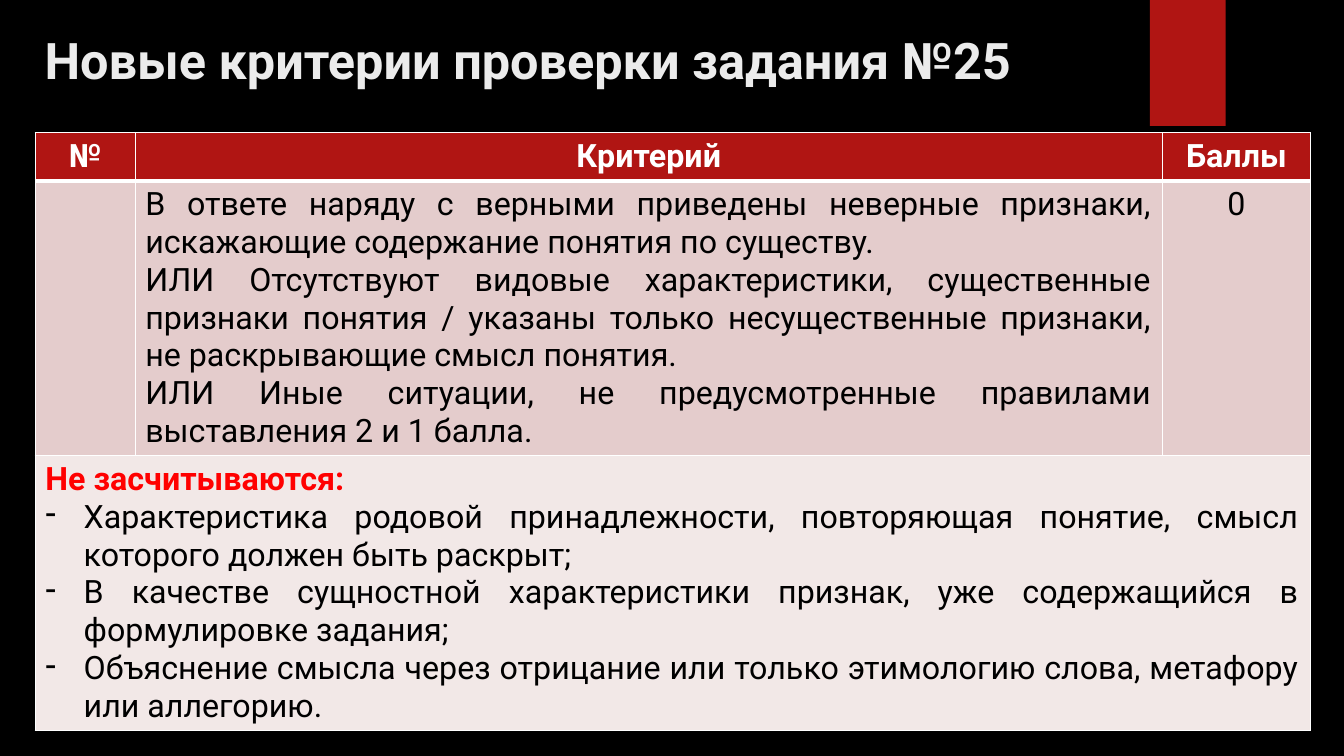
import lxml.etree
import pptx
import pptx.dml.color
import pptx.enum.shapes
import pptx.enum.text
import pptx.oxml.ns
import pptx.util

RGBColor = pptx.dml.color.RGBColor
Align = pptx.enum.text.PP_ALIGN
BLACK = RGBColor(0x00, 0x00, 0x00)
WHITE = RGBColor(0xFF, 0xFF, 0xFF)
PALE_WHITE = RGBColor(0xEB, 0xEB, 0xEB)
CRIMSON = RGBColor(0xB0, 0x15, 0x13)
RED = RGBColor(0xFF, 0x00, 0x00)
ROSE = RGBColor(0xE4, 0xCC, 0xCC)
LIGHT_ROSE = RGBColor(0xF2, 0xE8, 0xE7)

TITLE = "Новые критерии проверки задания №25"
HEADINGS = ["№", "Критерий", "Баллы"]
CRITERIA = [
    "В ответе наряду с верными приведены неверные признаки, искажающие содержание понятия по существу.",
    "ИЛИ Отсутствуют видовые характеристики, существенные признаки понятия / указаны только "
    "несущественные признаки, не раскрывающие смысл понятия.",
    "ИЛИ Иные ситуации, не предусмотренные правилами выставления 2 и 1 балла.",
]
REJECTED_HEADING = "Не засчитываются:"
REJECTED = [
    "Характеристика родовой принадлежности, повторяющая понятие, смысл которого должен быть раскрыт;",
    "В качестве сущностной характеристики признак, уже содержащийся в формулировке задания;",
    "Объяснение смысла через отрицание или только этимологию слова, метафору или аллегорию.",
]


def add_element(parent, tag, **attributes):
    """Append a drawing element with the given attributes."""
    element = lxml.etree.SubElement(parent, pptx.oxml.ns.qn(tag))
    for name, value in attributes.items():
        element.set(name, str(value))
    return element


def write(frame, text, size=23, color=BLACK, bold=False, align=Align.JUSTIFY, bullet=None):
    """Write one paragraph, reusing the first one while it is empty."""
    para = frame.paragraphs[0] if not frame.text else frame.add_paragraph()
    para.alignment = align
    if bullet:
        indent = pptx.util.Inches(0.38)
        properties = para._p.get_or_add_pPr()
        properties.set("marL", str(indent))
        properties.set("indent", str(-indent))
        add_element(properties, "a:buChar", char=bullet)
    span = para.add_run()
    span.text = text
    span.font.name = "Roboto"
    span.font.size = pptx.util.Pt(size)
    span.font.bold = bold
    span.font.color.rgb = color


class Page:
    """A slide on a grid of 160 columns by 90 rows."""

    def __init__(self, deck):
        """Add a title-only slide with a black background."""
        self.column = deck.slide_width / 160
        self.row = deck.slide_height / 90
        self.slide = deck.slides.add_slide(deck.slide_layouts[5])
        self.slide.background.fill.solid()
        self.slide.background.fill.fore_color.rgb = BLACK

    def place(self, left, top, width, height):
        """Turn grid units into slide lengths."""
        return (int(left * self.column), int(top * self.row),
                int(width * self.column), int(height * self.row))

    def title(self, text, *area):
        """Move and fill the title placeholder."""
        box = self.slide.shapes.title
        box.left, box.top, box.width, box.height = self.place(*area)
        box.text_frame.vertical_anchor = pptx.enum.text.MSO_ANCHOR.MIDDLE
        write(box.text_frame, text, size=36, color=PALE_WHITE, bold=True, align=Align.LEFT)

    def block(self, color, *area):
        """Draw a plain filled rectangle."""
        box = self.slide.shapes.add_shape(
            pptx.enum.shapes.MSO_SHAPE.RECTANGLE, *self.place(*area))
        box.shadow.inherit = False
        box.fill.solid()
        box.fill.fore_color.rgb = color
        box.line.fill.background()

    def table(self, left, top, widths, heights, fills):
        """Add a table with white borders and one fill per row."""
        area = self.place(left, top, sum(widths), sum(heights))
        table = self.slide.shapes.add_table(len(heights), len(widths), *area).table
        for column, width in zip(table.columns, widths):
            column.width = int(width * self.column)
        for index, (row, height, fill) in enumerate(zip(table.rows, heights, fills)):
            row.height = int(height * self.row)
            for cell in row.cells:
                self.border(cell, top=3 if index == 1 else 1, bottom=3 if index == 0 else 1)
                cell.fill.solid()
                cell.fill.fore_color.rgb = fill
        return table

    def border(self, cell, top, bottom):
        """Give a cell white borders of the given widths in points."""
        properties = cell._tc.get_or_add_tcPr()
        for side, width in (("L", 1), ("R", 1), ("T", top), ("B", bottom)):
            line = add_element(properties, f"a:ln{side}", w=pptx.util.Pt(width))
            add_element(add_element(line, "a:solidFill"), "a:srgbClr", val=WHITE)


def main():
    """Build and save the slide."""
    deck = pptx.Presentation()
    deck.slide_width = pptx.util.Inches(13.33)
    deck.slide_height = pptx.util.Inches(7.5)
    page = Page(deck)
    page.block(CRIMSON, 136.9, 0, 9, 15)
    page.title(TITLE, 4.1, 2.6, 132.6, 9)

    table = page.table(4.2, 15.8, [11.9, 122.3, 17.6], [5.7, 32.7, 32.7],
                       [CRIMSON, ROSE, LIGHT_ROSE])
    for column, heading in enumerate(HEADINGS):
        write(table.cell(0, column).text_frame, heading,
              color=WHITE, bold=True, align=Align.CENTER)
    for criterion in CRITERIA:
        write(table.cell(1, 1).text_frame, criterion)
    write(table.cell(1, 2).text_frame, "0", align=Align.CENTER)

    table.cell(2, 0).merge(table.cell(2, 2))
    rejected_frame = table.cell(2, 0).text_frame
    write(rejected_frame, REJECTED_HEADING, color=RED, bold=True)
    for reason in REJECTED:
        write(rejected_frame, reason, bullet="-")
    deck.save("out.pptx")


if __name__ == "__main__":
    main()
